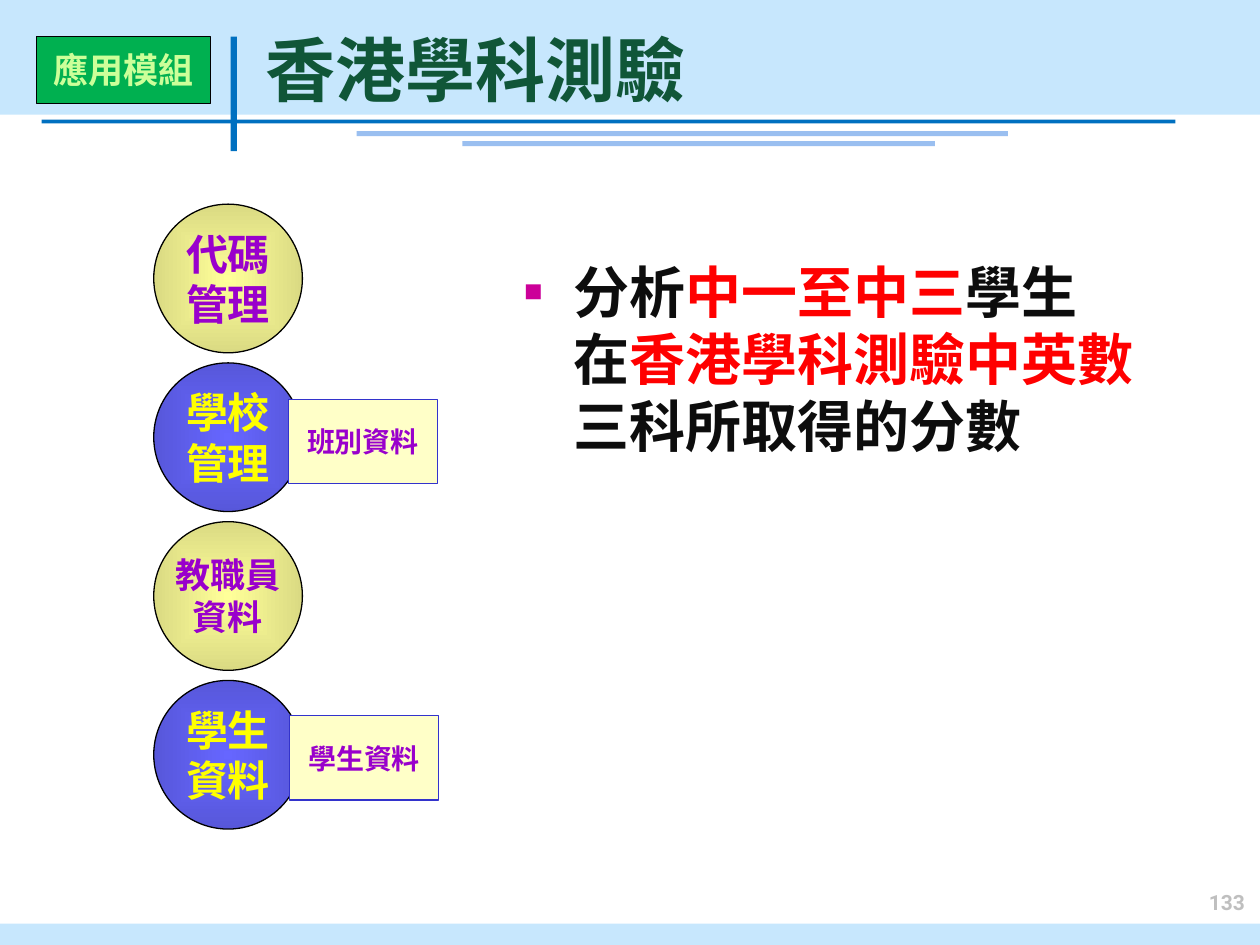
from lxml import etree
from pptx import Presentation
from pptx.dml.color import RGBColor
from pptx.enum.shapes import MSO_SHAPE as Shape
from pptx.enum.text import MSO_ANCHOR as Anchor, MSO_AUTO_SIZE as AutoSize, PP_ALIGN as Align
from pptx.oxml import parse_xml
from pptx.oxml.ns import nsdecls, qn
from pptx.util import Inches, Pt

COLORS = {
    "band": "C7E7FD", "rule": "0070C0", "soft_rule": "9ABFF0", "title": "105638",
    "badge": "00B050", "badge_text": "CCFF99", "black": "000000", "purple": "9900CC",
    "yellow": "FFFF00", "note": "FFFFC8", "note_line": "3333CC", "number": "BFBFBF",
    "ink": "0D0D0D", "red": "FF0000", "bullet": "CC0099",
    "gold": "FFFF99", "dark_gold": "DADA83", "blue": "6666FF", "dark_blue": "5757DA",
}
FONT = "Noto Sans CJK SC"


def style_text(para, size, color, align=Align.LEFT, name=FONT, bold=True):
    para.alignment = align
    font = para.font
    font.size, font.bold, font.name = Pt(size), bold, name
    font.color.rgb = RGBColor.from_string(COLORS[color])
    defaults = para._p.pPr.find(qn("a:defRPr"))
    etree.SubElement(defaults, qn("a:ea")).set("typeface", name)


def add_block(kind, place, fill, line=None, text="", size=16, color="purple"):
    block = page.shapes.add_shape(kind, *map(Inches, place))
    block.shadow.inherit = False
    block.fill.solid()
    block.fill.fore_color.rgb = RGBColor.from_string(COLORS[fill])
    if line:
        block.line.color.rgb = RGBColor.from_string(COLORS[line])
        block.line.width = Pt(0.75)
    else:
        block.line.fill.background()
    if text:
        frame = block.text_frame
        frame.text = text
        frame.word_wrap = False
        frame.vertical_anchor = Anchor.MIDDLE
        for para in frame.paragraphs:
            style_text(para, size, color, Align.CENTER)
    return block


deck = Presentation()
deck.slide_width, deck.slide_height = Inches(10), Inches(7.5)
page = deck.slides.add_slide(deck.slide_layouts[1])

for place, fill in [
    ((0, 0, 10, 0.91), "band"),
    ((0, 7.33, 10, 0.17), "band"),
    ((1.83, 0.29, 0.05, 0.91), "rule"),
    ((0.33, 0.95, 9, 0.03), "rule"),
    ((2.83, 1.04, 5.17, 0.04), "soft_rule"),
    ((3.67, 1.12, 3.75, 0.04), "soft_rule"),
]:
    add_block(Shape.RECTANGLE, place, fill)

title = page.shapes.title
page.shapes._spTree.append(title._element)
title.left, title.top, title.width, title.height = map(Inches, (2.01, 0.16, 3.69, 0.77))
title.text_frame.text = "香港學科測驗"
title.text_frame.vertical_anchor = Anchor.TOP
title.text_frame.auto_size = AutoSize.NONE
style_text(title.text_frame.paragraphs[0], 40, "title")

modules = [
    ("代碼\n管理", 24, "purple", "gold", "dark_gold"),
    ("學校\n管理", 24, "yellow", "blue", "dark_blue"),
    ("教職員\n資料", 20, "purple", "gold", "dark_gold"),
    ("學生\n資料", 24, "yellow", "blue", "dark_blue"),
]
for index, (text, size, color, center, edge) in enumerate(modules):
    place = (1.22, 1.62 + 1.26 * index, 1.18, 1.18)
    circle = add_block(Shape.OVAL, place, center, "black", text, size, color)
    solid = circle._element.spPr.find(qn("a:solidFill"))
    solid.getparent().replace(solid, parse_xml(
        f'<a:gradFill {nsdecls("a")} rotWithShape="1"><a:gsLst>'
        f'<a:gs pos="0"><a:srgbClr val="{COLORS[center]}"/></a:gs>'
        f'<a:gs pos="100000"><a:srgbClr val="{COLORS[edge]}"/></a:gs></a:gsLst>'
        '<a:path path="shape"><a:fillToRect l="50000" t="50000" r="50000" b="50000"/>'
        '</a:path></a:gradFill>'))

for left, top, text in [(2.29, 3.17, "班別資料"), (2.3, 5.68, "學生資料")]:
    add_block(Shape.RECTANGLE, (left, top, 1.18, 0.67), "note", "note_line", text)

add_block(Shape.RECTANGLE, (0.29, 0.29, 1.38, 0.53), "badge", "black", "應用模組", 20, "badge_text")

number = page.shapes.add_textbox(*map(Inches, (9.41, 7.01, 0.57, 0.5)))
number.text_frame.word_wrap = True
number.text_frame.text = "133"
style_text(number.text_frame.paragraphs[0], 12, "number", Align.RIGHT, "Roboto")

body = page.placeholders[1]
body.left, body.top, body.width, body.height = map(Inches, (4.06, 1.99, 5.04, 1.72))
body.text_frame.auto_size = AutoSize.NONE
para = body.text_frame.paragraphs[0]
props = para._p.get_or_add_pPr()
props.set("marL", str(Inches(0.39)))
props.set("indent", str(Inches(-0.39)))
for xml in (
    f'<a:buClr {nsdecls("a")}><a:srgbClr val="{COLORS["bullet"]}"/></a:buClr>',
    f'<a:buSzPct {nsdecls("a")} val="55000"/>',
    f'<a:buChar {nsdecls("a")} char="■"/>',
):
    props.append(parse_xml(xml))
para.space_before = Pt(0)
style_text(para, 32, "ink")
for text, color in [
    ("分析", "ink"), ("中一至中三", "red"), ("學生在", "ink"),
    ("香港學科測驗中英數", "red"), ("三科所取得的分數", "ink"),
]:
    span = para.add_run()
    span.text = text
    span.font.color.rgb = RGBColor.from_string(COLORS[color])

deck.save("out.pptx")
